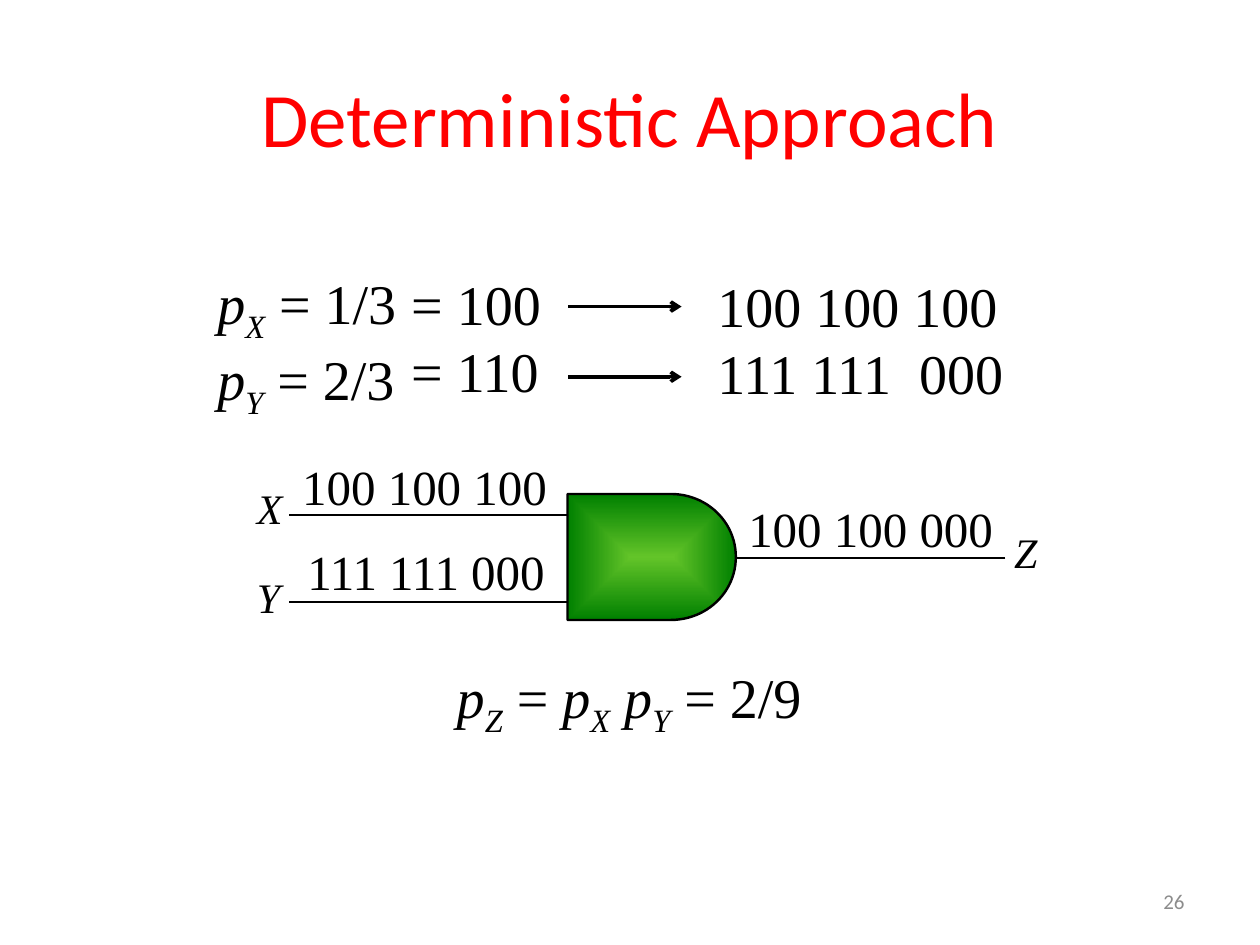
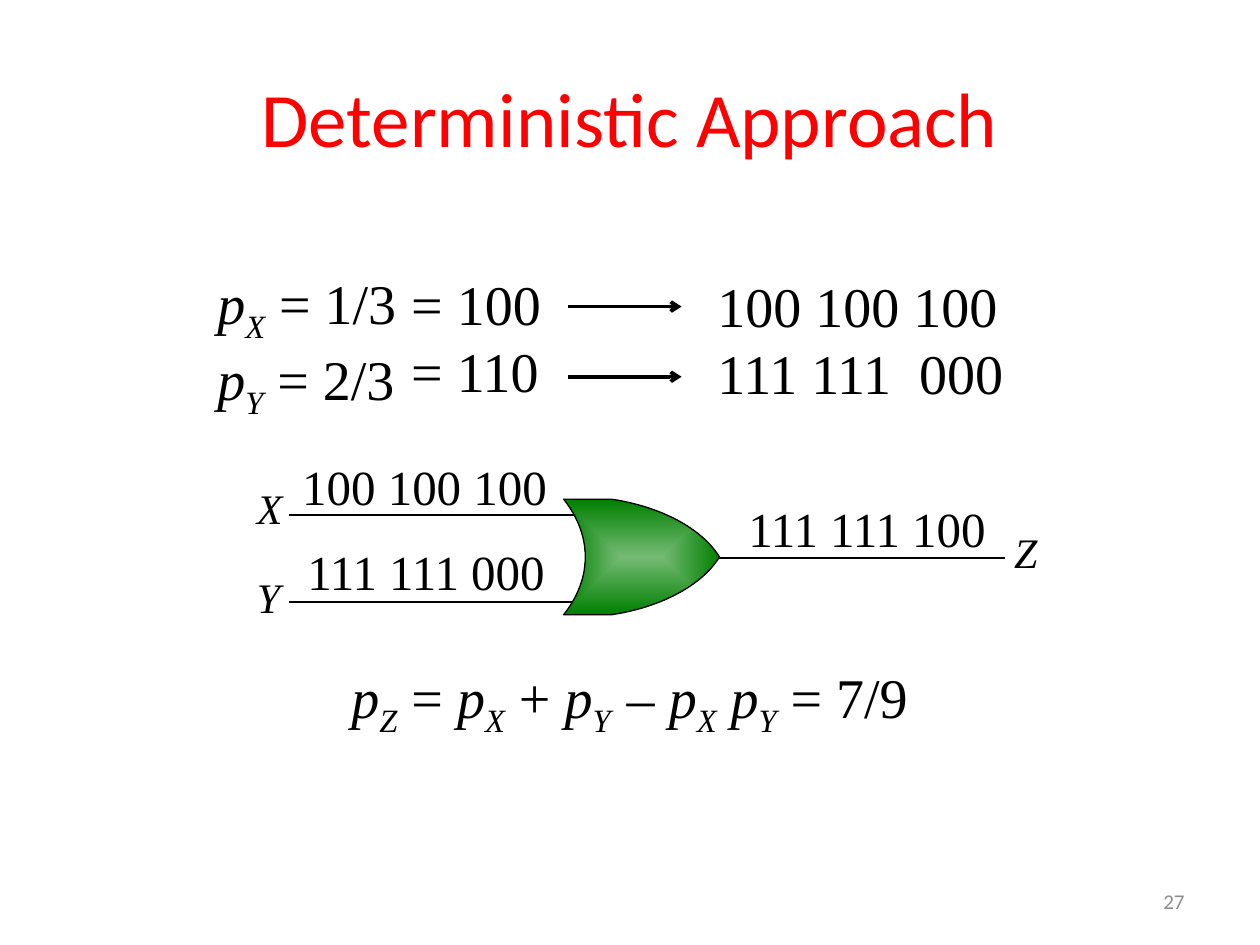
from dataclasses import dataclass
from typing import Any, NamedTuple

from lxml.etree import SubElement
from pptx import Presentation
from pptx.dml.color import RGBColor
from pptx.enum.shapes import MSO_CONNECTOR
from pptx.enum.text import MSO_ANCHOR, MSO_AUTO_SIZE, PP_ALIGN
from pptx.oxml.ns import qn
from pptx.util import Pt


@dataclass(frozen=True)
class Theme:
    title_font: str = "Calibri"
    math_font: str = "Times New Roman"
    title_size: float = 44
    formula_size: float = 32
    stream_size: float = 28
    label_size: float = 24
    number_size: float = 12
    title_color: RGBColor = RGBColor(0xFF, 0x00, 0x00)
    ink: RGBColor = RGBColor(0x00, 0x00, 0x00)
    number_color: RGBColor = RGBColor(0x8C, 0x8C, 0x8C)
    gate_edge: RGBColor = RGBColor(0x00, 0x80, 0x00)
    wire_width: float = 1.38
    arrow_width: float = 2


THEME = Theme()


class Box(NamedTuple):
    left: float
    top: float
    width: float
    height: float


class Point(NamedTuple):
    x: float
    y: float


class Piece(NamedTuple):
    text: str
    italic: bool = False
    sub: bool = False


Line = list[Piece]


class Label(NamedTuple):
    box: Box
    lines: list[Line]
    size: float


class Stroke(NamedTuple):
    start: Point
    end: Point


@dataclass(frozen=True)
class Gate:
    start: Point
    segments: list[list[Point]]
    center_color: RGBColor
    line_width: float


@dataclass(frozen=True)
class GateSlide:
    number: int
    gate: Gate
    output: str
    formula: Label


def plain(text: str) -> Line:
    return [Piece(text)]


def prob(subscript: str) -> Line:
    return [Piece("p", italic=True), Piece(subscript, italic=True, sub=True)]


def stream(left: float, top: float, bits: str) -> Label:
    return Label(Box(left, top, 164.9, 41), [plain(bits)], THEME.stream_size)


def name(left: float, top: float, letter: str) -> Label:
    return Label(Box(left, top, 54, 36), [[Piece(letter, italic=True)]], THEME.label_size)


def formula(left: float, width: float, line: Line) -> Label:
    return Label(Box(left, 375.1, width, 46.1), [line], THEME.formula_size)


MID_Y = 318.3


def flip(p: Point) -> Point:
    return Point(p.x, 2 * MID_Y - p.y)


def and_gate() -> Gate:
    corner, shoulder = Point(324.3, 282.3), Point(383.2, 282.3)
    nose = Point(420.5, MID_Y)
    upper = [Point(403.9, 282.3), Point(420.5, 298.2)]
    lower = [flip(p) for p in reversed(upper)]
    return Gate(
        corner,
        [[shoulder], [*upper, nose], [*lower, flip(shoulder)], [flip(corner)]],
        RGBColor(0x63, 0xC4, 0x29),
        THEME.wire_width,
    )


def or_gate() -> Gate:
    corner, shoulder = Point(322.1, 285.3), Point(349.5, 285.3)
    nose = Point(411.2, MID_Y)
    upper = [Point(377.5, 289.5), Point(400.8, 301.8)]
    lower = [flip(p) for p in reversed(upper)]
    back = Point(338.6, 306.1)
    return Gate(
        corner,
        [
            [shoulder],
            [*upper, nose],
            [*lower, flip(shoulder)],
            [flip(corner)],
            [flip(back), back, corner],
        ],
        RGBColor(0x74, 0xBA, 0x74),
        0,
    )


GIVENS = [
    Label(
        Box(117.1, 149.8, 119.5, 85),
        [prob("X") + plain(" = 1/3"), prob("Y") + plain(" = 2/3")],
        THEME.formula_size,
    ),
    Label(Box(227.9, 150.5, 94.3, 85), [plain("= 100"), plain("= 110")], THEME.formula_size),
    Label(
        Box(402.9, 151.6, 182.2, 85),
        [plain("100 100 100"), plain("111 111  000")],
        THEME.formula_size,
    ),
]
ARROWS = [Stroke(Point(324.7, y), Point(389.5, y)) for y in (175.2, 215.3)]
WIRES = [
    Stroke(Point(165.4, 294.3), Point(370, 294.3)),
    Stroke(Point(165.4, 343.9), Point(370, 343.9)),
    Stroke(Point(574.6, 319), Point(370, 319)),
]
NAMES = [name(139.7, 272.2, "X"), name(139.7, 323.3, "Y"), name(572.4, 297.4, "Z")]
INPUTS = [stream(165.6, 257.5, "100 100 100"), stream(168.5, 306, "111 111 000")]

PRODUCT = prob("X") + plain(" ") + prob("Y")
SLIDES = [
    GateSlide(
        26,
        and_gate(),
        "100 100 000",
        formula(253.9, 224.6, prob("Z") + plain(" = ") + PRODUCT + plain(" = 2/9")),
    ),
    GateSlide(
        27,
        or_gate(),
        "111 111 100",
        formula(
            193.7,
            344.2,
            prob("Z") + plain(" = ") + prob("X") + plain(" + ") + prob("Y  ")
            + plain("– ") + PRODUCT + plain(" = 7/9"),
        ),
    ),
]


def apply(target: Any, values: dict[str, Any]) -> None:
    for key, value in values.items():
        setattr(target, key, value)


def place(sp: Any, box: Box) -> None:
    apply(sp, {key: Pt(value) for key, value in box._asdict().items()})


def format_run(r: Any, font: str, size: float, color: RGBColor, italic: bool = False) -> None:
    apply(r.font, {"name": font, "size": Pt(size), "italic": italic})
    r.font.color.rgb = color


def format_line(sp: Any, width: float) -> None:
    sp.line.color.rgb = THEME.ink
    sp.line.width = Pt(width)


def add_label(s: Any, label: Label) -> None:
    tf = s.shapes.add_textbox(*map(Pt, label.box)).text_frame
    apply(tf, {"word_wrap": True, "auto_size": MSO_AUTO_SIZE.SHAPE_TO_FIT_TEXT})
    for i, line in enumerate(label.lines):
        p = tf.add_paragraph() if i else tf.paragraphs[0]
        for piece in line:
            r = p.add_run()
            r.text = piece.text
            format_run(r, THEME.math_font, label.size, THEME.ink, piece.italic)
            if piece.sub:
                r._r.get_or_add_rPr().set("baseline", "-25000")


def add_arrow(s: Any, arrow: Stroke) -> None:
    sp = s.shapes.add_connector(MSO_CONNECTOR.STRAIGHT, *map(Pt, arrow.start + arrow.end))
    format_line(sp, THEME.arrow_width)
    SubElement(sp.line._get_or_add_ln(), qn("a:tailEnd"), type="arrow")
    SubElement(sp._element.spPr, qn("a:effectLst"))


def add_wires(s: Any, wires: list[Stroke]) -> None:
    builder = s.shapes.build_freeform(*map(Pt, wires[0].start))
    for i, wire in enumerate(wires):
        if i:
            builder.move_to(*map(Pt, wire.start))
        builder.add_line_segments([tuple(map(Pt, wire.end))], close=False)
    sp = builder.convert_to_shape()
    sp.shadow.inherit = False
    sp.fill.background()
    format_line(sp, THEME.wire_width)


def curve(a: Point, b: Point, c: Point, d: Point, steps: int = 24) -> list[Point]:
    def at(t: float) -> Point:
        u = 1 - t
        weights = (u**3, 3 * u * u * t, 3 * u * t * t, t**3)
        return Point(*(sum(w * v for w, v in zip(weights, axis)) for axis in zip(a, b, c, d)))

    return [at(i / steps) for i in range(1, steps + 1)]


def add_gate(s: Any, gate: Gate) -> None:
    points = [gate.start]
    for segment in gate.segments:
        points += curve(points[-1], *segment) if len(segment) == 3 else segment
    builder = s.shapes.build_freeform(*map(Pt, gate.start))
    builder.add_line_segments([tuple(map(Pt, p)) for p in points[1:]], close=True)
    sp = builder.convert_to_shape()
    sp.shadow.inherit = False
    format_line(sp, gate.line_width)
    sp.fill.gradient()
    for stop, color in zip(sp.fill.gradient_stops, (gate.center_color, THEME.gate_edge)):
        stop.color.rgb = color
    grad = sp._element.spPr.find(qn("a:gradFill"))
    grad.remove(grad.find(qn("a:lin")))
    shade = SubElement(grad, qn("a:path"))
    shade.set("path", "rect")
    SubElement(shade, qn("a:fillToRect"), dict.fromkeys("ltrb", "50000"))


def add_title(s: Any, text: str) -> None:
    sp = s.shapes.title
    place(sp, Box(36, 21.6, 648, 90))
    sp.text_frame.vertical_anchor = MSO_ANCHOR.MIDDLE
    p = sp.text_frame.paragraphs[0]
    p.alignment = PP_ALIGN.CENTER
    r = p.add_run()
    r.text = text
    format_run(r, THEME.title_font, THEME.title_size, THEME.title_color)


def add_number(s: Any, number: int) -> None:
    tf = s.shapes.add_textbox(*map(Pt, Box(516.2, 500.4, 167.8, 28.8))).text_frame
    apply(tf, {"word_wrap": True, "vertical_anchor": MSO_ANCHOR.MIDDLE})
    p = tf.paragraphs[0]
    p.alignment = PP_ALIGN.RIGHT
    r = p.add_run()
    r.text = str(number)
    format_run(r, THEME.title_font, THEME.number_size, THEME.number_color)


def main() -> None:
    prs = Presentation()
    apply(prs, {"slide_width": Pt(720), "slide_height": Pt(540)})
    for content in SLIDES:
        s = prs.slides.add_slide(prs.slide_layouts[5])
        add_title(s, "Deterministic Approach")
        add_number(s, content.number)
        for arrow in ARROWS:
            add_arrow(s, arrow)
        add_wires(s, WIRES)
        add_gate(s, content.gate)
        output = stream(420.5, 281.1, content.output)
        for label in [*GIVENS, *NAMES, *INPUTS, output, content.formula]:
            add_label(s, label)
    prs.save("out.pptx")


if __name__ == "__main__":
    main()
